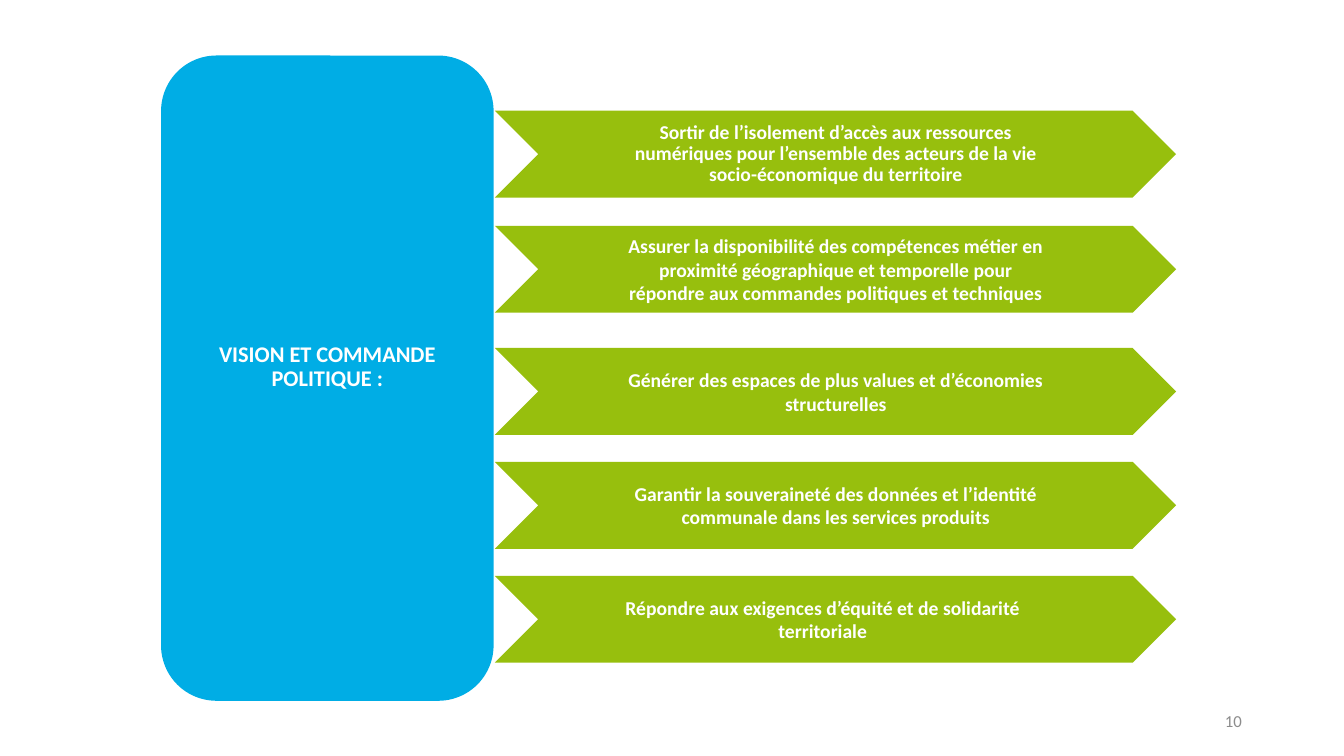
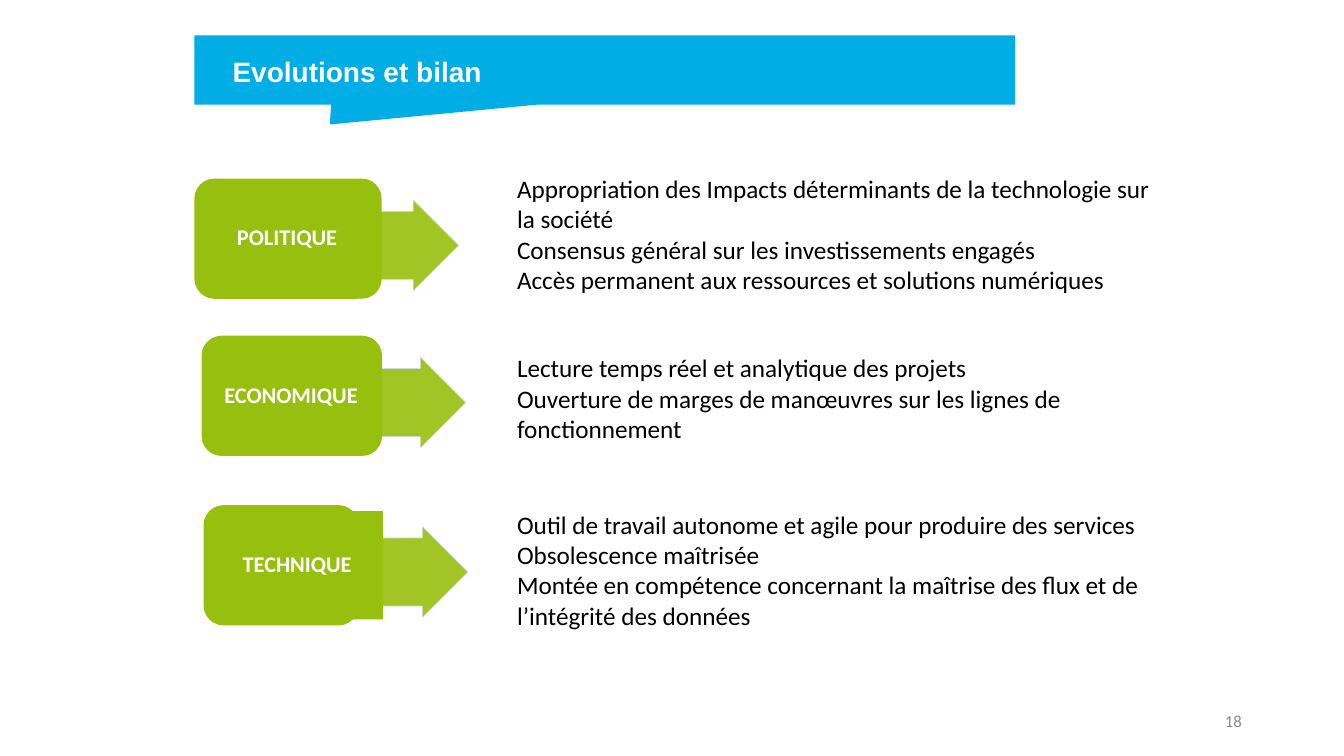
from lxml import etree
from pptx import Presentation
from pptx.dml.color import RGBColor
from pptx.enum.shapes import MSO_SHAPE
from pptx.enum.text import MSO_ANCHOR, MSO_AUTO_SIZE, PP_ALIGN
from pptx.oxml.ns import qn
from pptx.util import Cm, Pt

LEFT, CENTER, RIGHT = PP_ALIGN.LEFT, PP_ALIGN.CENTER, PP_ALIGN.RIGHT
TOP, MIDDLE = MSO_ANCHOR.TOP, MSO_ANCHOR.MIDDLE
NO_FIT = MSO_AUTO_SIZE.NONE
RECTANGLE, ROUNDED = MSO_SHAPE.RECTANGLE, MSO_SHAPE.ROUNDED_RECTANGLE
CHEVRON, ARROW = MSO_SHAPE.CHEVRON, MSO_SHAPE.RIGHT_ARROW
CALLOUT = MSO_SHAPE.RECTANGULAR_CALLOUT

COLORS = {
    "blue": "00ADE5",
    "green": "97BF0D",
    "outline": "D2DEEF",
    "white": "FFFFFF",
    "black": "000000",
    "grey": "8C8C8C",
}
BODY_FONT, TITLE_FONT = "Calibri", "Arial"
TITLE_ONLY = 5
DEFAULT_INSETS = (0.25, 0.13, 0.25, 0.13)

GOALS_BOX = (4.06, 1.4, 25.58, 16.26)
PANEL_WIDTH = 8.38
GOAL_HEIGHT = 2.19
GOALS = [
    (1.39, 0, 0.9,
     "Sortir de l’isolement d’accès aux ressources numériques pour "
     "l’ensemble des acteurs de la vie socio-économique du territoire"),
    (4.29, 0, 1,
     "Assurer la disponibilité des compétences métier en proximité "
     "géographique et temporelle pour répondre aux commandes politiques "
     "et techniques"),
    (7.37, 0, 1,
     "Générer des espaces de plus values et d’économies structurelles"),
    (10.24, 0, 1,
     "Garantir la souveraineté des données et l’identité communale dans "
     "les services produits"),
    (13.11, -0.33, 1,
     "Répondre aux exigences d’équité et de solidarité territoriale"),
]

FINDINGS = [
    ("POLITIQUE", (4.9, 4.5, 4.72, 3.03), 4.27, 4.24,
     ["Appropriation des Impacts déterminants de la technologie sur la société",
      "Consensus général sur les investissements engagés",
      "Accès permanent aux ressources et solutions numériques"]),
    ("ECONOMIQUE", (5.08, 8.46, 4.55, 3.03), 4.11, 8.76,
     ["Lecture temps réel et analytique des projets",
      "Ouverture de marges de manœuvres sur les lignes de fonctionnement"]),
    ("TECHNIQUE", (5.13, 12.73, 3.91, 3.03), 4.32, 12.7,
     ["Outil de travail autonome et agile pour produire des services",
      "Obsolescence maîtrisée",
      "Montée en compétence concernant la maîtrise des flux et de "
      "l’intégrité des données"]),
]


def rgb(name):
    return RGBColor.from_string(COLORS[name])


def add_filled(slide, preset, box, color):
    shape = slide.shapes.add_shape(preset, *map(Cm, box))
    shape.shadow.inherit = False
    shape.fill.solid()
    shape.fill.fore_color.rgb = rgb(color)
    shape.line.fill.background()
    return shape


def write(shape, lines, size, color="white", bold=False, align=LEFT,
          anchor=TOP, font=BODY_FONT, spacing=1, insets=DEFAULT_INSETS):
    frame = shape.text_frame
    frame.text = "\n".join(lines)
    frame.word_wrap = True
    frame.auto_size = NO_FIT
    frame.vertical_anchor = anchor
    (frame.margin_left, frame.margin_top,
     frame.margin_right, frame.margin_bottom) = map(Cm, insets)
    for paragraph in frame.paragraphs:
        paragraph.alignment = align
        paragraph.line_spacing = spacing
        paragraph.font.name = font
        paragraph.font.size = Pt(size)
        paragraph.font.bold = bold
        paragraph.font.color.rgb = rgb(color)


def add_text(slide, box, lines, size, **style):
    write(slide.shapes.add_textbox(*map(Cm, box)), lines, size, **style)


def place_title(slide, box, text, size, **style):
    title = slide.shapes.title
    title.left, title.top, title.width, title.height = map(Cm, box)
    write(title, [text], size, bold=True, **style)
    title._element.getparent().append(title._element)


def add_page_number(slide, number):
    add_text(slide, (23.93, 17.65, 7.62, 1.02), [number], 12,
             color="grey", align=RIGHT, anchor=MIDDLE)


def set_opacity(fill, percent):
    for color in fill.iter(qn("a:srgbClr")):
        etree.SubElement(color, qn("a:alpha")).set("val", str(percent * 1000))


def add_vision_panel(slide, box):
    left, top, width, height = box
    add_filled(slide, ROUNDED, box, "blue")
    place_title(slide, (left, top + 6.98, width, 1.74),
                "VISION ET COMMANDE POLITIQUE :", 16, align=CENTER,
                anchor=MIDDLE, spacing=0.9)


def add_goal(slide, box, text, shift, spacing):
    goal = add_filled(slide, CHEVRON, box, "green")
    write(goal, [text], 14, bold=True, align=CENTER, anchor=MIDDLE,
          spacing=spacing, insets=(2.08 + shift, 0.02, 2.06 - shift, 0.02))


def add_goals(slide, box):
    left, top, width, height = box
    add_vision_panel(slide, (left, top, PANEL_WIDTH, height))
    goal_left = left + PANEL_WIDTH + 0.03
    goal_width = width - PANEL_WIDTH - 0.03
    for offset, shift, spacing, text in GOALS:
        add_goal(slide, (goal_left, top + offset, goal_width, GOAL_HEIGHT),
                 text, shift, spacing)


def add_title_banner(slide, box):
    left, top, width, height = box
    banner = add_filled(slide, CALLOUT, box, "blue")
    banner.adjustments[0] = -0.335
    banner.adjustments[1] = 0.784
    place_title(slide, (left + 0.71, top + 0.35, width, 1.2),
                "Evolutions et bilan", 20, font=TITLE_FONT)


def add_theme_card(slide, box, theme, label_width):
    left, top, width, height = box
    arrow = add_filled(slide, ARROW, (left + 3.94, top + 0.54, 2.72, 2.29),
                       "green")
    arrow.adjustments[0] = 0.75
    arrow.adjustments[1] = 0.5
    arrow.line.color.rgb = rgb("outline")
    arrow.line.width = Pt(0.5)
    set_opacity(arrow._element.spPr, 90)
    add_filled(slide, ROUNDED, box, "green")
    label = add_filled(slide, RECTANGLE,
                       (left + 0.2, top + 0.15, label_width, height - 0.3),
                       "green")
    write(label, [theme], 16, bold=True, align=CENTER, anchor=MIDDLE,
          spacing=0.9, insets=(0.18, 0.08, 0.18, 0.08))


def build_vision_slide(deck):
    slide = deck.slides.add_slide(deck.slide_layouts[TITLE_ONLY])
    add_goals(slide, GOALS_BOX)
    add_page_number(slide, "10")


def build_review_slide(deck):
    slide = deck.slides.add_slide(deck.slide_layouts[TITLE_ONLY])
    add_title_banner(slide, (4.9, 0.89, 20.68, 1.75))
    for theme, card_box, label_width, text_top, findings in FINDINGS:
        add_theme_card(slide, card_box, theme, label_width)
        add_text(slide, (12.78, text_top, 16.9, 3.33), findings, 18,
                 color="black")
    add_page_number(slide, "18")


def main():
    deck = Presentation()
    deck.slide_width, deck.slide_height = Cm(33.87), Cm(19.05)
    build_vision_slide(deck)
    build_review_slide(deck)
    deck.save("out.pptx")


if __name__ == "__main__":
    main()
